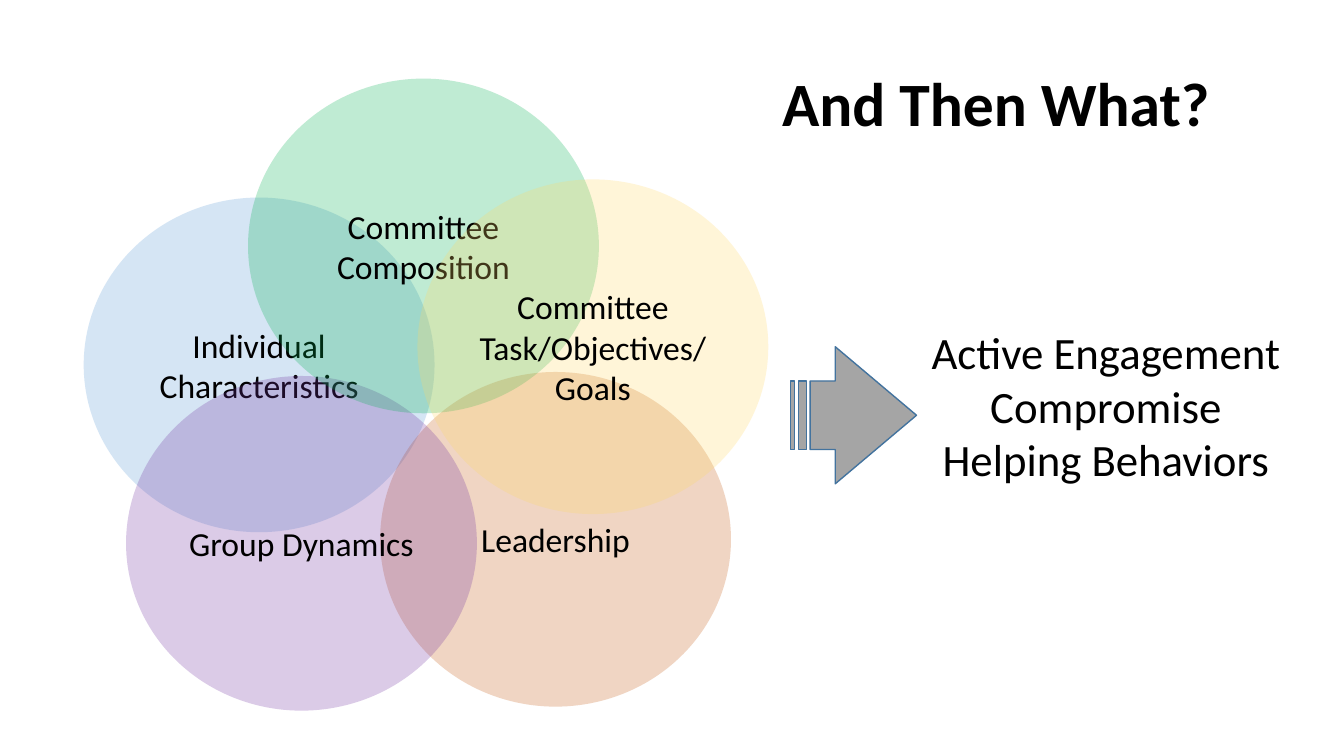
from lxml import etree
from pptx import Presentation
from pptx.dml.color import RGBColor
from pptx.enum.shapes import MSO_SHAPE
from pptx.enum.text import MSO_ANCHOR, PP_ALIGN
from pptx.oxml.ns import qn
from pptx.util import Inches, Pt

ELLIPSE, STRIPED_ARROW = MSO_SHAPE.OVAL, MSO_SHAPE.STRIPED_RIGHT_ARROW
TOP, MIDDLE = MSO_ANCHOR.TOP, MSO_ANCHOR.MIDDLE
CENTER, RIGHT = PP_ALIGN.CENTER, PP_ALIGN.RIGHT

BLACK = RGBColor(0x00, 0x00, 0x00)
BLUE = RGBColor(0x5B, 0x9B, 0xD5)
ORANGE = RGBColor(0xC5, 0x5A, 0x11)
PURPLE = RGBColor(0x70, 0x30, 0xA0)
GREEN = RGBColor(0x00, 0xB0, 0x50)
YELLOW = RGBColor(0xFF, 0xD9, 0x66)
GRAY = RGBColor(0xA5, 0xA5, 0xA5)
STEEL = RGBColor(0x43, 0x73, 0x9E)

HEADING = ["And Then What? "]
OUTCOMES = ["Active Engagement", "Compromise", "Helping Behaviors"]
FACTORS = [
    (["Individual", "Characteristics"], BLUE, 0.83, 1.96),
    (["Leadership"], ORANGE, 3.77, 3.69),
    (["Group Dynamics"], PURPLE, 1.25, 3.73),
    (["Committee Composition"], GREEN, 2.46, 0.78),
    (["Committee Task/Objectives/Goals"], YELLOW, 4.14, 1.78),
]
FACTOR_SIZE = (3.48, 3.32)
FACTOR_OPACITY = 25

HEADING_FONT = {"name": "Calibri", "size": Pt(44), "bold": True}
FACTOR_FONT = {"name": "Calibri", "size": Pt(24)}
OUTCOME_FONT = {"name": "Calibri", "size": Pt(32)}


def box(*lengths):
    return [Inches(length) for length in lengths]


def write(frame, lines, font, align=CENTER, anchor=MIDDLE, wrap=True, spacing=1.0):
    frame.word_wrap = wrap
    frame.vertical_anchor = anchor
    for number, line in enumerate(lines):
        paragraph = frame.add_paragraph() if number else frame.paragraphs[0]
        paragraph.alignment = align
        paragraph.line_spacing = spacing
        run = paragraph.add_run()
        run.text = line
        for key, value in font.items():
            setattr(run.font, key, value)
        run.font.color.rgb = BLACK


def add_filled(slide, preset, place, color):
    figure = slide.shapes.add_shape(preset, *box(*place))
    figure.shadow.inherit = False
    figure.fill.solid()
    figure.fill.fore_color.rgb = color
    return figure


def add_factor(slide, lines, color, left, top):
    circle = add_filled(slide, ELLIPSE, (left, top, *FACTOR_SIZE), color)
    circle.line.fill.background()
    tint = circle.fill._xPr.find(qn("a:solidFill"))[0]
    etree.SubElement(tint, qn("a:alpha")).set("val", str(FACTOR_OPACITY * 1000))
    write(circle.text_frame, lines, FACTOR_FONT)


def main():
    deck = Presentation()
    deck.slide_width, deck.slide_height = box(13.33, 7.5)
    slide = deck.slides.add_slide(deck.slide_layouts[6])

    heading = slide.shapes.add_textbox(*box(6.18, 0.33, 6.06, 1.45))
    write(heading.text_frame, HEADING, HEADING_FONT, align=RIGHT, spacing=0.9)

    for factor in FACTORS:
        add_factor(slide, *factor)

    arrow = add_filled(slide, STRIPED_ARROW, (7.84, 3.44, 1.25, 1.36), GRAY)
    arrow.adjustments[0] = 0.5
    arrow.adjustments[1] = 0.645
    arrow.line.color.rgb = STEEL
    arrow.line.width = Pt(1)

    outcomes = slide.shapes.add_textbox(*box(9.12, 3.17, 3.7, 1.72))
    write(outcomes.text_frame, OUTCOMES, OUTCOME_FONT, anchor=TOP, wrap=False)

    deck.save("out.pptx")


if __name__ == "__main__":
    main()
